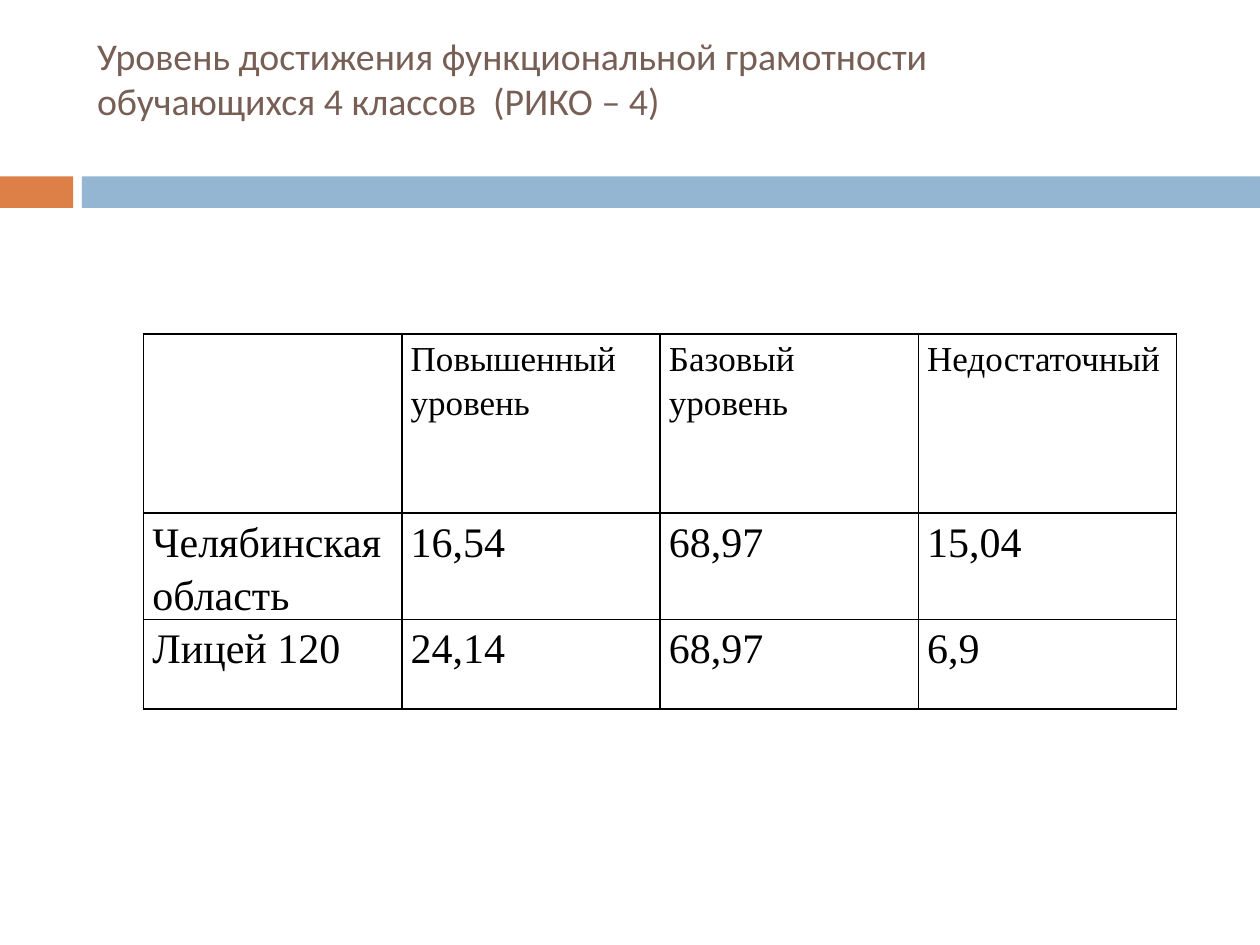
from lxml.etree import SubElement
from pptx import Presentation
from pptx.dml.color import RGBColor
from pptx.enum.shapes import MSO_SHAPE
from pptx.enum.text import MSO_ANCHOR, PP_ALIGN
from pptx.oxml.ns import qn
from pptx.util import Inches, Pt

TITLE = "Уровень достижения функциональной грамотности\vобучающихся 4 классов  (РИКО – 4)"
BARS = [(0, 0.58, "DD8047"), (0.65, 9.35, "94B6D2")]
ROWS = [
    ["", "Повышенный уровень", "Базовый уровень", "Недостаточный"],
    ["Челябинская область", "16,54", "68,97", "15,04"],
    ["Лицей 120", "24,14", "68,97", "6,9"],
]
ROW_UNITS = [2, 1, 1]
ROW_UNIT, COLUMN_WIDTH = 0.71, 2.05
HEADER_SIZE, BODY_SIZE = 20, 24


def color(value):
    """Turn a hex string into a colour."""
    return RGBColor.from_string(value)


def style_font(paragraph, name, size, value):
    """Set the font of a whole paragraph."""
    paragraph.font.name = name
    paragraph.font.size = Pt(size)
    paragraph.font.bold = False
    paragraph.font.color.rgb = color(value)


def add_bar(slide, left, width, value):
    """Add one piece of the band under the title."""
    bar = slide.shapes.add_shape(
        MSO_SHAPE.RECTANGLE, Inches(left), Inches(1.4), Inches(width), Inches(0.25))
    bar.shadow.inherit = False
    bar.fill.solid()
    bar.fill.fore_color.rgb = color(value)
    bar.line.fill.background()


def set_title(slide):
    """Place and format the title."""
    title = slide.shapes.title
    title.left, title.top = Inches(0.67), Inches(0.25)
    title.width, title.height = Inches(8.92), Inches(1.08)
    frame = title.text_frame
    frame.text = TITLE
    frame.word_wrap = True
    frame.vertical_anchor = MSO_ANCHOR.TOP
    frame.margin_top = Inches(0.01)
    paragraph = frame.paragraphs[0]
    paragraph.alignment = PP_ALIGN.LEFT
    paragraph.line_spacing = 1.0
    paragraph.space_before = Pt(0)
    style_font(paragraph, "Calibri", 21.6, "775F55")


def set_borders(cell, value):
    """Draw a one-point line on all four sides of a cell."""
    properties = cell._tc.get_or_add_tcPr()
    for position, side in enumerate(("a:lnL", "a:lnR", "a:lnT", "a:lnB")):
        line = properties.makeelement(qn(side), {"w": str(Pt(1))})
        fill = SubElement(line, qn("a:solidFill"))
        SubElement(fill, qn("a:srgbClr"), val=value)
        properties.insert(position, line)


def format_cell(cell, text, size):
    """Fill in one table cell."""
    cell.text = text
    cell.fill.background()
    cell.margin_left = cell.margin_right = Inches(0.07)
    cell.margin_top = cell.margin_bottom = 0
    paragraph = cell.text_frame.paragraphs[0]
    paragraph.line_spacing = 1.15
    style_font(paragraph, "Times New Roman", size, "000000")
    set_borders(cell, "000000")


def add_results(slide):
    """Add the table of results."""
    columns = len(ROWS[0])
    table = slide.shapes.add_table(
        len(ROWS), columns, Inches(1.14), Inches(2.65),
        Inches(columns * COLUMN_WIDTH), Inches(sum(ROW_UNITS) * ROW_UNIT)).table
    table.first_row = table.horz_banding = False
    for column in table.columns:
        column.width = Inches(COLUMN_WIDTH)
    for index, (texts, units) in enumerate(zip(ROWS, ROW_UNITS)):
        table.rows[index].height = Inches(units * ROW_UNIT)
        for cell, text in zip(table.rows[index].cells, texts):
            format_cell(cell, text, BODY_SIZE if index else HEADER_SIZE)


def main():
    """Build the slide and save it."""
    presentation = Presentation()
    presentation.slide_width, presentation.slide_height = Inches(10), Inches(7.5)
    slide = presentation.slides.add_slide(presentation.slide_layouts[5])
    for bar in BARS:
        add_bar(slide, *bar)
    set_title(slide)
    add_results(slide)
    presentation.save("out.pptx")


if __name__ == "__main__":
    main()
